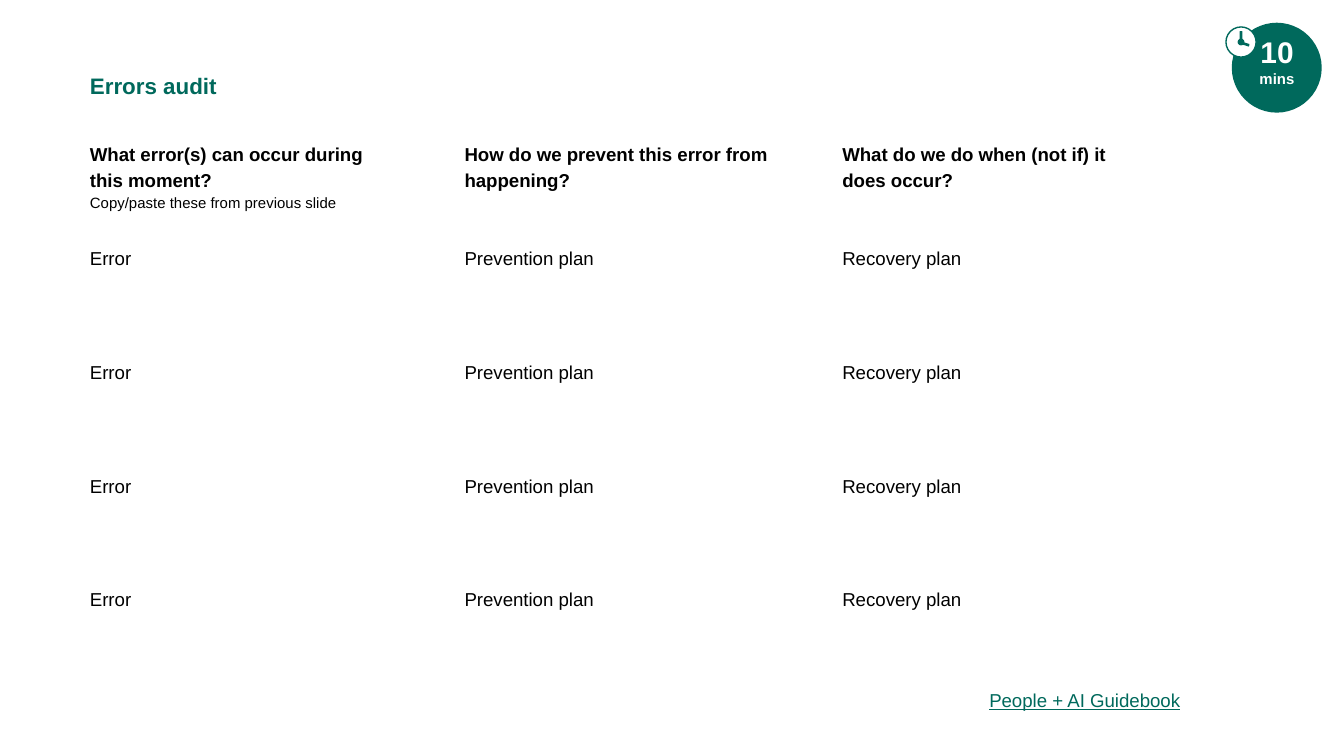
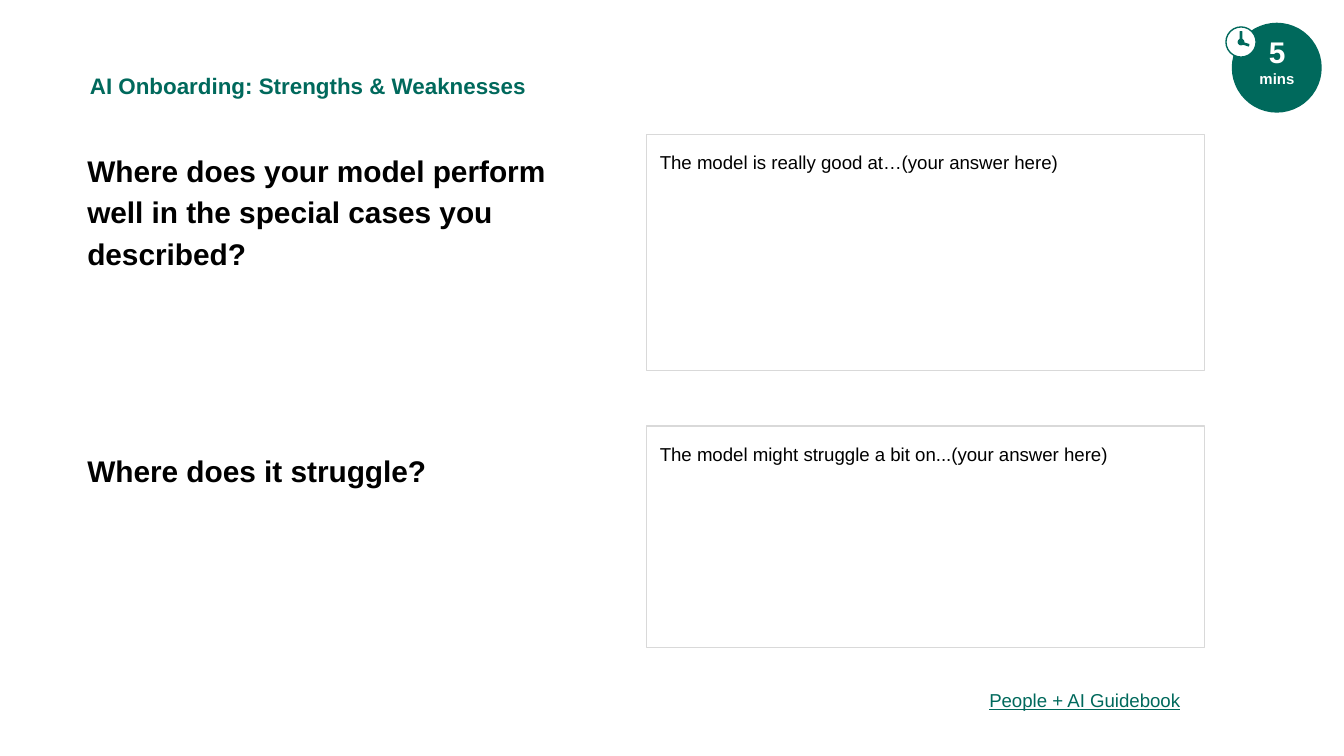
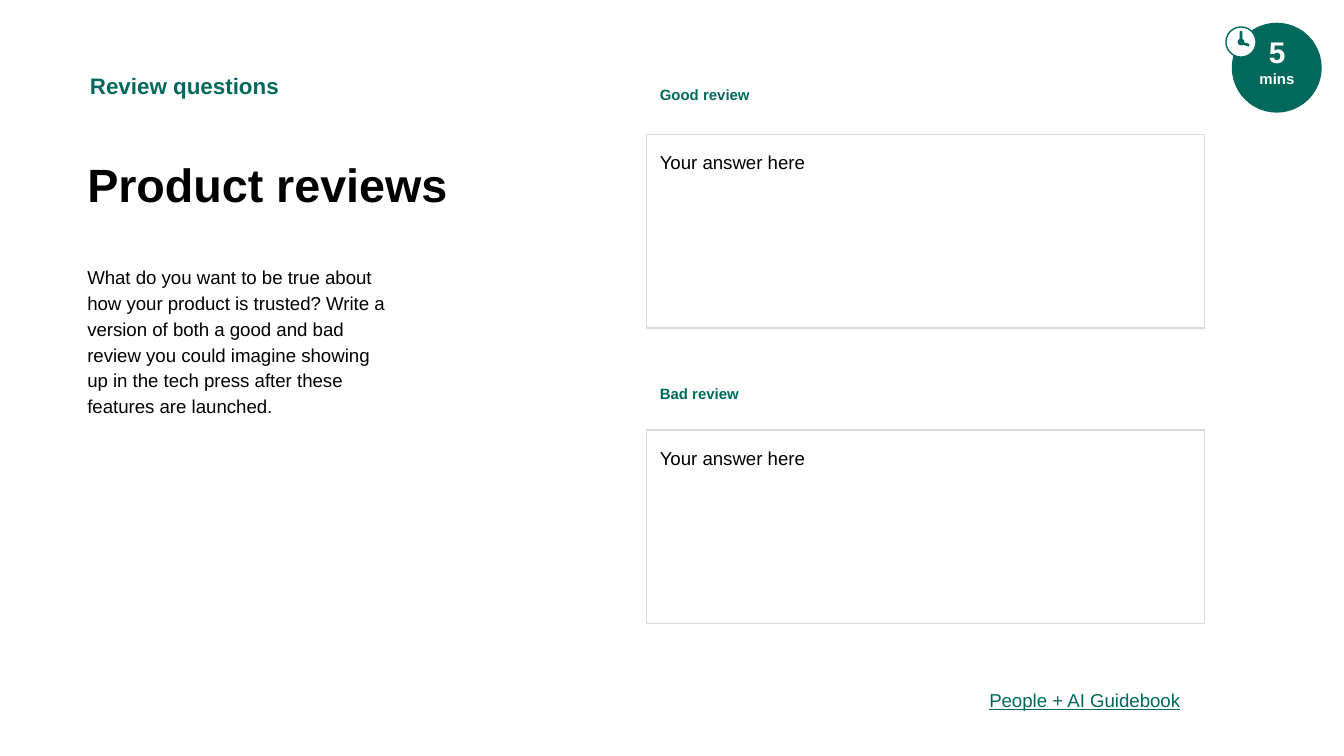
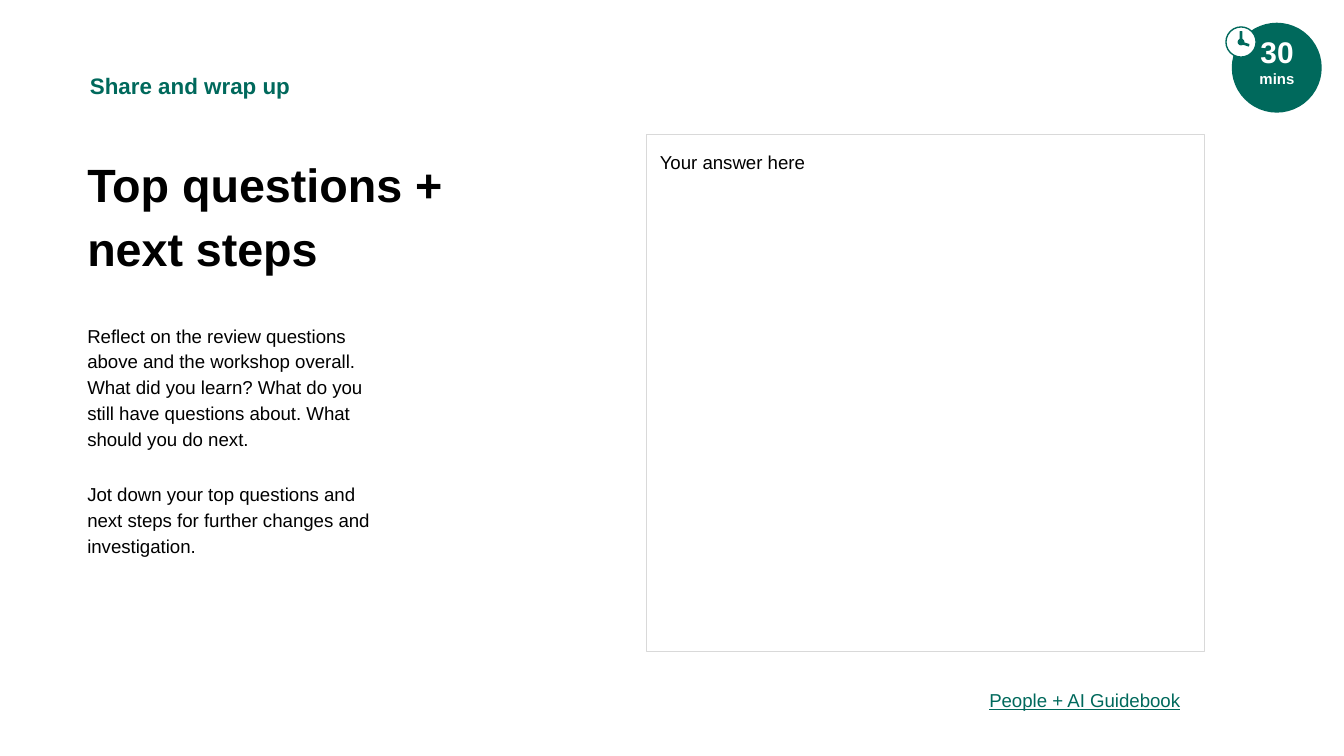
from copy import deepcopy

from pptx import Presentation
from pptx.dml.color import RGBColor
from pptx.enum.shapes import MSO_SHAPE
from pptx.enum.text import MSO_ANCHOR, PP_ALIGN
from pptx.util import Cm, Pt

ELLIPSE, RECT = MSO_SHAPE.OVAL, MSO_SHAPE.RECTANGLE
ROUND_RECT = MSO_SHAPE.ROUNDED_RECTANGLE
TOP, BOTTOM = MSO_ANCHOR.TOP, MSO_ANCHOR.BOTTOM
CENTER, RIGHT = PP_ALIGN.CENTER, PP_ALIGN.RIGHT

GREEN = RGBColor(0x00, 0x69, 0x5C)
GREY = RGBColor(0xD9, 0xD9, 0xD9)
BLACK = RGBColor(0, 0, 0)
WHITE = RGBColor(255, 255, 255)

# Text styles
BODY = {"size": Pt(10), "color": BLACK}
STRONG = {**BODY, "bold": True}
HINT = {**BODY, "size": Pt(8)}
QUESTION = {**STRONG, "size": Pt(16)}
HEADLINE = {**STRONG, "size": Pt(25)}
TITLE = {"size": Pt(12), "color": GREEN, "bold": True}
LABEL = {**TITLE, "size": Pt(8)}
LINK = {"size": Pt(10), "color": GREEN, "underline": True}
MINUTES = {"size": Pt(16), "color": WHITE, "bold": True}
UNIT = {**MINUTES, "size": Pt(8)}

# Paragraph styles
LOOSE = {"line_spacing": 1.15}
LOOSE_AFTER = {**LOOSE, "space_after": Pt(16)}
LOOSE_APART = {**LOOSE_AFTER, "space_before": Pt(16)}

# Shared positions in cm
TITLE_LEFT, TITLE_TOP, TITLE_HEIGHT = 1.45, 1.22, 0.91
TEXT_LEFT, CONTENT_TOP = 1.4, 2.54
ANSWER_LEFT, ANSWER_WIDTH = 12.22, 10.54
HEADLINE_SIZE = (8.53, 2.11)
NARROW_WIDTH = 6.27
BADGE_BOX = (23.28, 0.43, 1.7, 1.7)
FOOTER_BOX = (17.83, 12.75, 4.72, 0.91)


def set_attributes(target, values):
    for name, value in values.items():
        setattr(target, name, value)


def style_run(run, style):
    values = dict(style)
    run.font.color.rgb = values.pop("color")
    set_attributes(run.font, {"name": "Arial", **values})


def write(frame, paragraphs, anchor=TOP):
    """Fill a frame with (paragraph style, [(text, run style), ...]) entries."""
    inset = Cm(0.25)
    set_attributes(frame, {
        "word_wrap": True, "vertical_anchor": anchor,
        "margin_left": inset, "margin_right": inset,
        "margin_top": inset, "margin_bottom": inset})
    for index, (layout, runs) in enumerate(paragraphs):
        paragraph = frame.paragraphs[0] if index == 0 else frame.add_paragraph()
        set_attributes(paragraph, layout)
        for text, style in runs:
            for number, line in enumerate(text.split("\n")):
                if number:
                    # The break takes the size of the line it ends
                    paragraph.add_line_break()
                    line_end = paragraph._p[-1]
                    line_end.append(deepcopy(paragraph.runs[-1].font._element))
                if line:
                    run = paragraph.add_run()
                    run.text = line
                    style_run(run, style)


def add_text(slide, box, paragraphs, anchor=TOP):
    textbox = slide.shapes.add_textbox(*map(Cm, box))
    write(textbox.text_frame, paragraphs, anchor)


def add_line_of_text(slide, box, text, style, layout=LOOSE, anchor=TOP):
    add_text(slide, box, [(layout, [(text, style)])], anchor)


def add_preset(shapes, preset, box, fill=None, line=None):
    shape = shapes.add_shape(preset, *map(Cm, box))
    shape.shadow.inherit = False
    if fill is None:
        shape.fill.background()
    else:
        shape.fill.solid()
        shape.fill.fore_color.rgb = fill
    if line is None:
        shape.line.fill.background()
    else:
        shape.line.color.rgb = line
        shape.line.width = Pt(0.75)
    return shape


def add_answer(slide, top, height, text):
    box = (ANSWER_LEFT, top, ANSWER_WIDTH, height)
    answer = add_preset(slide.shapes, RECT, box, line=GREY)
    write(answer.text_frame, [({"alignment": PP_ALIGN.LEFT, **LOOSE}, [(text, BODY)])])


def add_clock(slide, left, top):
    clock = slide.shapes.add_group_shape().shapes
    add_preset(clock, ELLIPSE, (left, top, 0.57, 0.57), WHITE, GREEN)
    add_preset(clock, ELLIPSE, (left + 0.22, top + 0.22, 0.13, 0.13), GREEN)
    add_preset(clock, ROUND_RECT, (left + 0.26, top + 0.08, 0.05, 0.2), GREEN)
    hour_hand = add_preset(clock, ROUND_RECT, (left + 0.33, top + 0.23, 0.05, 0.18), GREEN)
    hour_hand.rotation = 287.5


def add_badge(slide, box, minutes):
    left, top, _, _ = box
    add_preset(slide.shapes, ELLIPSE, box, GREEN)
    add_text(slide, (left + 0.22, top + 0.26, 1.27, 1.22),
             [({"alignment": CENTER}, [(minutes, MINUTES)]),
              ({"alignment": CENTER}, [("mins", UNIT)])], BOTTOM)
    add_clock(slide, left - 0.11, top + 0.08)


def add_base(deck, title, minutes):
    """Add a slide with its title, time badge and footer link."""
    slide = deck.slides.add_slide(deck.slide_layouts[6])
    add_line_of_text(slide, (TITLE_LEFT, TITLE_TOP, 13.11, TITLE_HEIGHT),
                     title, TITLE, {}, BOTTOM)
    add_badge(slide, BADGE_BOX, minutes)
    add_line_of_text(slide, FOOTER_BOX, "People + AI Guidebook", LINK,
                     {"alignment": RIGHT}, BOTTOM)
    return slide


def add_audit_column(slide, left, top, heading, entry, rows=4):
    add_text(slide, (left, top, NARROW_WIDTH, 1.96), [(LOOSE_AFTER, heading)])
    first_row, row_pitch = top + 1.97, 2.15
    for row in range(rows):
        add_line_of_text(slide, (left, first_row + row * row_pitch, 5.92, 1.57),
                         entry, BODY)


def errors_audit(deck):
    slide = add_base(deck, "Errors audit", "10")
    columns = [
        (TITLE_LEFT, [("What error(s) can occur during\nthis moment?\n", STRONG),
                      ("Copy/paste these from previous slide", HINT)], "Error"),
        (8.53, [("How do we prevent this error from happening?", STRONG)],
         "Prevention plan"),
        (15.67, [("What do we do when (not if) it does occur?", STRONG)],
         "Recovery plan"),
    ]
    for left, heading, entry in columns:
        add_audit_column(slide, left, 2.39, heading, entry)


def strengths_and_weaknesses(deck):
    slide = add_base(deck, "AI Onboarding: Strengths & Weaknesses", "5")
    topics = [
        (CONTENT_TOP, "Where does your model perform well in the special cases you described?",
         CONTENT_TOP, 4.47, "The model is really good at…(your answer here)"),
        (8.2, "Where does it struggle?",
         8.05, 4.19, "The model might struggle a bit on...(your answer here)"),
    ]
    for question_top, question, answer_top, answer_height, answer in topics:
        add_line_of_text(slide, (TEXT_LEFT, question_top, 9.73, 2.11), question, QUESTION)
        add_answer(slide, answer_top, answer_height, answer)


def add_brief(slide, headline, body_top, body_height, paragraphs):
    """Place the headline and explanation on the left."""
    add_line_of_text(slide, (TEXT_LEFT, CONTENT_TOP, *HEADLINE_SIZE), headline, HEADLINE)
    add_text(slide, (TEXT_LEFT, body_top, NARROW_WIDTH, body_height),
             [(layout, [(text, BODY)]) for layout, text in paragraphs])


def product_reviews(deck):
    slide = add_base(deck, "Review questions", "5")
    add_brief(slide, "Product reviews", 4.72, 1.96, [
        (LOOSE_AFTER, "What do you want to be true about how your product is trusted? "
                      "Write a version of both a good and bad review you could imagine "
                      "showing up in the tech press after these features are launched.")])
    for label, label_top, answer_top in [("Good review", TITLE_TOP, CONTENT_TOP),
                                         ("Bad review", 6.86, 8.13)]:
        add_line_of_text(slide, (ANSWER_LEFT, label_top, 6.53, TITLE_HEIGHT),
                         label, LABEL, {}, BOTTOM)
        add_answer(slide, answer_top, 3.66, "Your answer here")


def wrap_up(deck):
    slide = add_base(deck, "Share and wrap up", "30")
    add_brief(slide, "Top questions + next steps", 5.82, 5.49, [
        (LOOSE, "Reflect on the review questions above and the workshop overall. "
                "What did you learn? What do you still have questions about. "
                "What should you do next."),
        (LOOSE_APART, "Jot down your top questions and next steps for further "
                      "changes and investigation.")])
    add_answer(slide, CONTENT_TOP, 9.78, "Your answer here")


def main():
    deck = Presentation()
    deck.slide_width, deck.slide_height = Cm(25.4), Cm(14.29)
    for build in (errors_audit, strengths_and_weaknesses, product_reviews, wrap_up):
        build(deck)
    deck.save("out.pptx")


if __name__ == "__main__":
    main()
